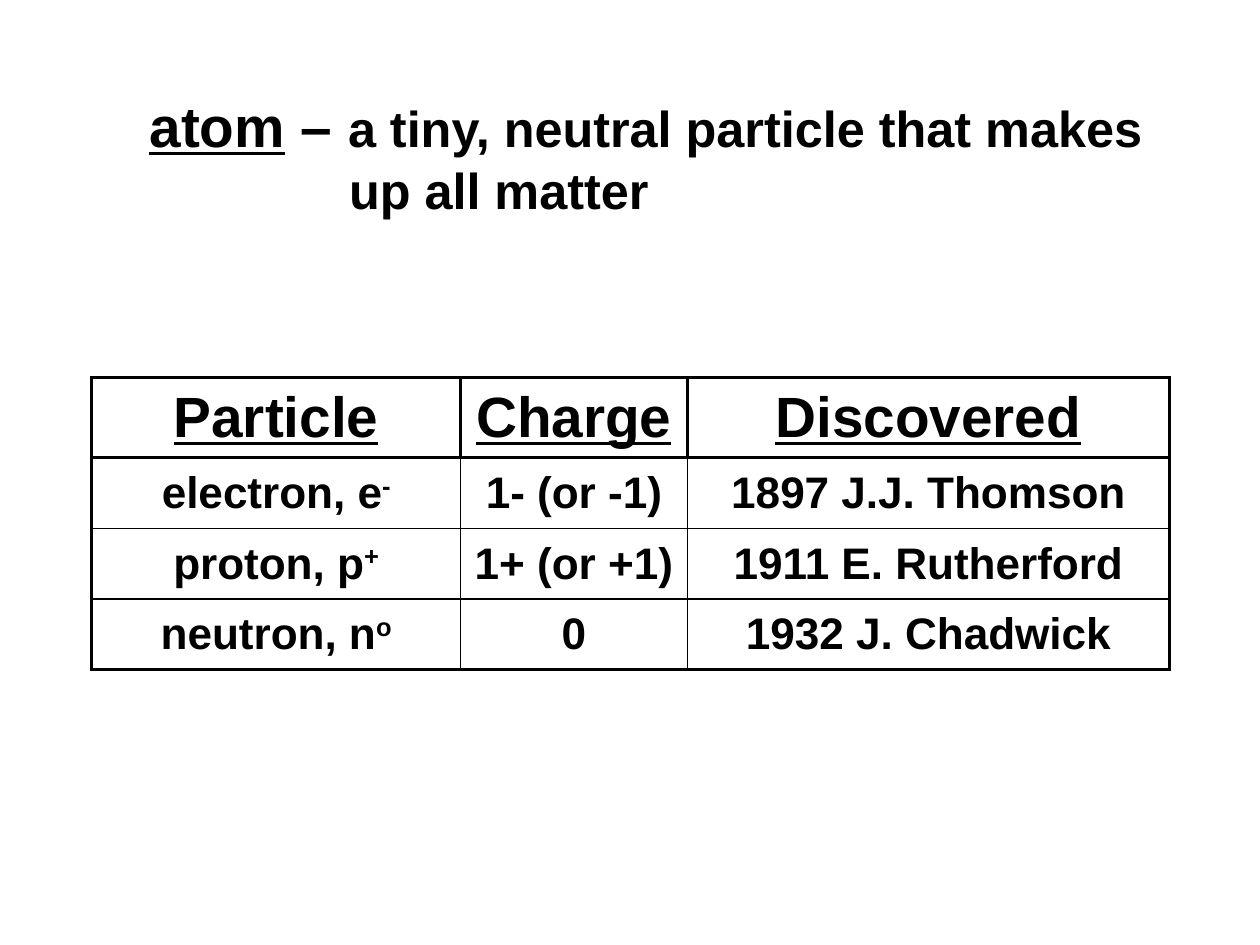
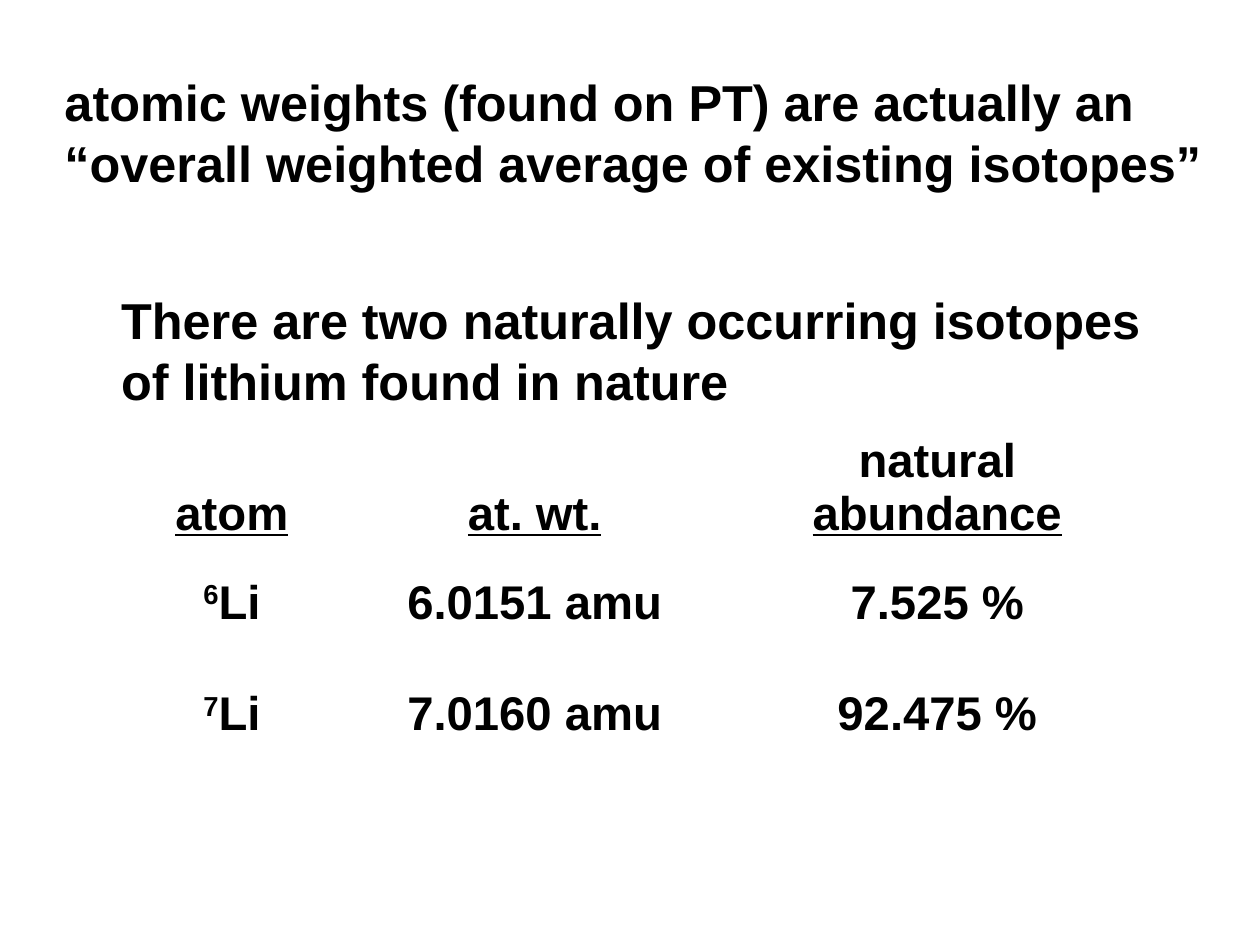
from lxml import etree
from pptx import Presentation
from pptx.dml.color import RGBColor
from pptx.enum import text as t
from pptx.oxml.ns import qn
from pptx.util import Inches, Pt

BLACK = RGBColor(0x00, 0x00, 0x00)
FONT = "Arial"
BODY = 32
THICK, THIN = 2.25, 1
UNDERLINE = {"underline": True}
SUPER = {"baseline": 30000}


# Text: a line is a list of (text, format) runs
def add_runs(p, runs, size):
    for text, fmt in runs:
        r = p.add_run()
        r.text = text
        values = {"name": FONT, "size": Pt(size), "bold": True, "underline": False, **fmt}
        baseline = values.pop("baseline", None)
        for name, value in values.items():
            setattr(r.font, name, value)
        r.font.color.rgb = BLACK
        if baseline:
            r._r.get_or_add_rPr().set("baseline", str(baseline))


def add_text(slide, box, runs, hanging=0):
    sp = slide.shapes.add_textbox(*map(Inches, box))
    tf = sp.text_frame
    tf.word_wrap = True
    p = tf.paragraphs[0]
    if hanging:
        pPr = p._p.get_or_add_pPr()
        pPr.set("marL", str(Inches(hanging)))
        pPr.set("indent", str(-Inches(hanging)))
    add_runs(p, runs, BODY)


# Tables
def set_border(cell, side, width):
    ln = etree.SubElement(cell._tc.get_or_add_tcPr(), qn(f"a:ln{side}"), w=str(Pt(width)))
    fill = etree.SubElement(ln, qn("a:solidFill"))
    etree.SubElement(fill, qn("a:srgbClr"), val=str(BLACK))


def rule_cell(cell, row, col, last_row, last_col):
    """Thick lines round the table and the header row, thin ones elsewhere."""
    thick = {"L": row == 0 or col == 0, "R": row == 0 or col == last_col,
             "T": row <= 1, "B": row in (0, last_row)}
    for side, is_thick in thick.items():
        set_border(cell, side, THICK if is_thick else THIN)


def add_table(slide, left, top, widths, heights, rows, sizes, anchor, ruled=False):
    frame = slide.shapes.add_table(len(rows), len(widths), Inches(left), Inches(top),
                                   Inches(sum(widths)), Inches(sum(heights)))
    table = frame.table
    table.first_row = table.horz_banding = False
    for column, width in zip(table.columns, widths):
        column.width = Inches(width)
    for row, height in zip(table.rows, heights):
        row.height = Inches(height)
    for i, row in enumerate(rows):
        for j, lines in enumerate(row):
            cell = table.cell(i, j)
            if ruled:
                rule_cell(cell, i, j, len(rows) - 1, len(widths) - 1)
            cell.fill.background()
            cell.vertical_anchor = anchor
            tf = cell.text_frame
            for k, runs in enumerate(lines):
                p = tf.add_paragraph() if k else tf.paragraphs[0]
                p.alignment = t.PP_ALIGN.CENTER
                add_runs(p, runs, sizes[min(i, 1)])
    return table


def plain(text):
    return [[(text, {})]]


def heading(text):
    return [[(text, UNDERLINE)]]


# Slides
def atom_slide(slide):
    add_text(slide, (1.22, 0.75, 9.17, 1.23),
             [("atom", {"size": Pt(36), **UNDERLINE}), (" – ", {"size": Pt(36)}),
              ("a tiny, neutral particle that makes up all matter", {})], hanging=1.76)
    particles = [("electron, e", "-", "1- (or -1)", "1897 J.J. Thomson"),
                 ("proton, p", "+", "1+ (or +1)", "1911 E. Rutherford"),
                 ("neutron, n", "o", "0", "1932 J. Chadwick")]
    rows = [[heading(h) for h in ("Particle", "Charge", "Discovered")]]
    rows += [[[[(name, {}), (sign, SUPER)]], plain(charge), plain(found)]
             for name, sign, charge, found in particles]
    add_table(slide, 0.81, 3.33, (3.25, 2, 4.25), (0.7, 0.63, 0.62, 0.62), rows,
              (36, 28), t.MSO_ANCHOR.MIDDLE, ruled=True)


def isotope_slide(slide):
    isotopes = [("6", "6.0151 amu", "7.525 %"), ("7", "7.0160 amu", "92.475 %")]
    rows = [[heading("atom"), heading("at. wt."), plain("natural") + heading("abundance")]]
    rows += [[[[(mass, SUPER), ("Li", {})]], plain(weight), plain(share)]
             for mass, weight, share in isotopes]
    table = add_table(slide, 0.93, 3.76, (2.23, 3.11, 3.99), (1.27, 0.98, 0.92), rows,
                      (30, 30), t.MSO_ANCHOR.TOP)
    # Headings share the lower line
    for cell in table.rows[0].cells:
        cell.vertical_anchor = t.MSO_ANCHOR.BOTTOM
        cell.margin_top, cell.margin_bottom = 0, Inches(0.27)
    add_text(slide, (0.97, 2.5, 9.25, 1.18),
             [("There are two naturally occurring isotopes of lithium found in nature", {})])
    add_text(slide, (0.47, 0.58, 10.58, 1.18),
             [("atomic weights (found on PT) are actually an "
               "“overall weighted average of existing isotopes”", {})])


def main():
    prs = Presentation()
    prs.slide_width, prs.slide_height = Inches(11.11), Inches(8.33)
    for build in (atom_slide, isotope_slide):
        build(prs.slides.add_slide(prs.slide_layouts[6]))
    prs.save("out.pptx")


if __name__ == "__main__":
    main()
